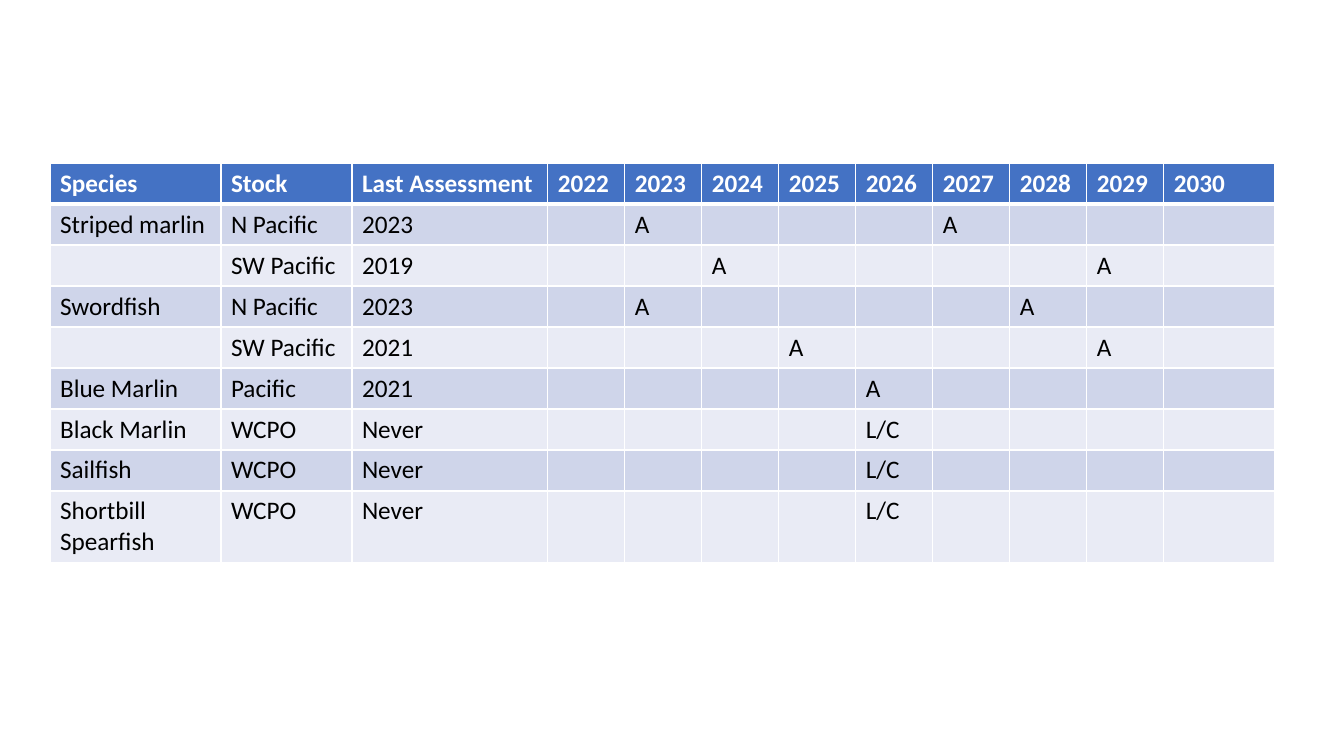
"""Build a slide with the billfish stock assessment schedule."""
import pptx
import pptx.dml.color
import pptx.oxml
import pptx.oxml.ns
import pptx.util

SCALE = 914400 / 100.8
WHITE, BLACK, BLUE = "FFFFFF", "000000", "4472C4"
BANDS = ["CFD5EA", "E9EBF5"]
YEARS = range(2022, 2031)
WIDTHS = [171, 131, 196] + [77] * 8 + [111]
HIGH = 41
STOCKS = [
    ("Striped marlin", "N Pacific", "2023", {2023: "A", 2027: "A"}),
    ("", "SW Pacific", "2019", {2024: "A", 2029: "A"}),
    ("Swordfish", "N Pacific", "2023", {2023: "A", 2028: "A"}),
    ("", "SW Pacific", "2021", {2025: "A", 2029: "A"}),
    ("Blue Marlin", "Pacific", "2021", {2026: "A"}),
    ("Black Marlin", "WCPO", "Never", {2026: "L/C"}),
    ("Sailfish", "WCPO", "Never", {2026: "L/C"}),
    ("Shortbill Spearfish", "WCPO", "Never", {2026: "L/C"}),
]


def px(size):
    return pptx.util.Emu(round(size * SCALE))


def color(code):
    return pptx.dml.color.RGBColor.from_string(code)


def edge(cell, side, width):
    space = pptx.oxml.ns.nsdecls("a")
    line = pptx.oxml.parse_xml(
        f'<a:ln{side} {space} w="{pptx.util.Pt(width)}"><a:solidFill>'
        f'<a:srgbClr val="{WHITE}"/></a:solidFill></a:ln{side}>')
    cell._tc.get_or_add_tcPr().append(line)


def style(cell, text, fill, ink, bold, top, base):
    for side, width in zip("LRTB", (1, 1, top, base)):
        edge(cell, side, width)
    cell.fill.solid()
    cell.fill.fore_color.rgb = color(fill)
    cell.text = text
    font = cell.text_frame.paragraphs[0].font
    font.name = "Calibri"
    font.size = pptx.util.Pt(18)
    font.bold = bold
    font.color.rgb = color(ink)


def grid(slide, left, top, rows):
    frame = slide.shapes.add_table(
        len(rows), len(WIDTHS), px(left), px(top),
        px(sum(WIDTHS)), px(HIGH * len(rows)))
    table = frame.table
    for col, width in zip(table.columns, WIDTHS):
        col.width = px(width)
    for i, row in enumerate(rows):
        table.rows[i].height = px(HIGH)
        head = i == 0
        fill = BLUE if head else BANDS[(i - 1) % 2]
        ink = WHITE if head else BLACK
        for j, text in enumerate(row):
            style(table.cell(i, j), text, fill, ink, head,
                  3 if i == 1 else 1, 3 if head else 1)


def main():
    deck = pptx.Presentation()
    deck.slide_width, deck.slide_height = px(1344), px(756)
    slide = deck.slides.add_slide(deck.slide_layouts[6])
    rows = [["Species", "Stock", "Last Assessment", *map(str, YEARS)]]
    for *labels, marks in STOCKS:
        rows.append(labels + [marks.get(year, "") for year in YEARS])
    grid(slide, 50, 163, rows)
    deck.save("out.pptx")


if __name__ == "__main__":
    main()
